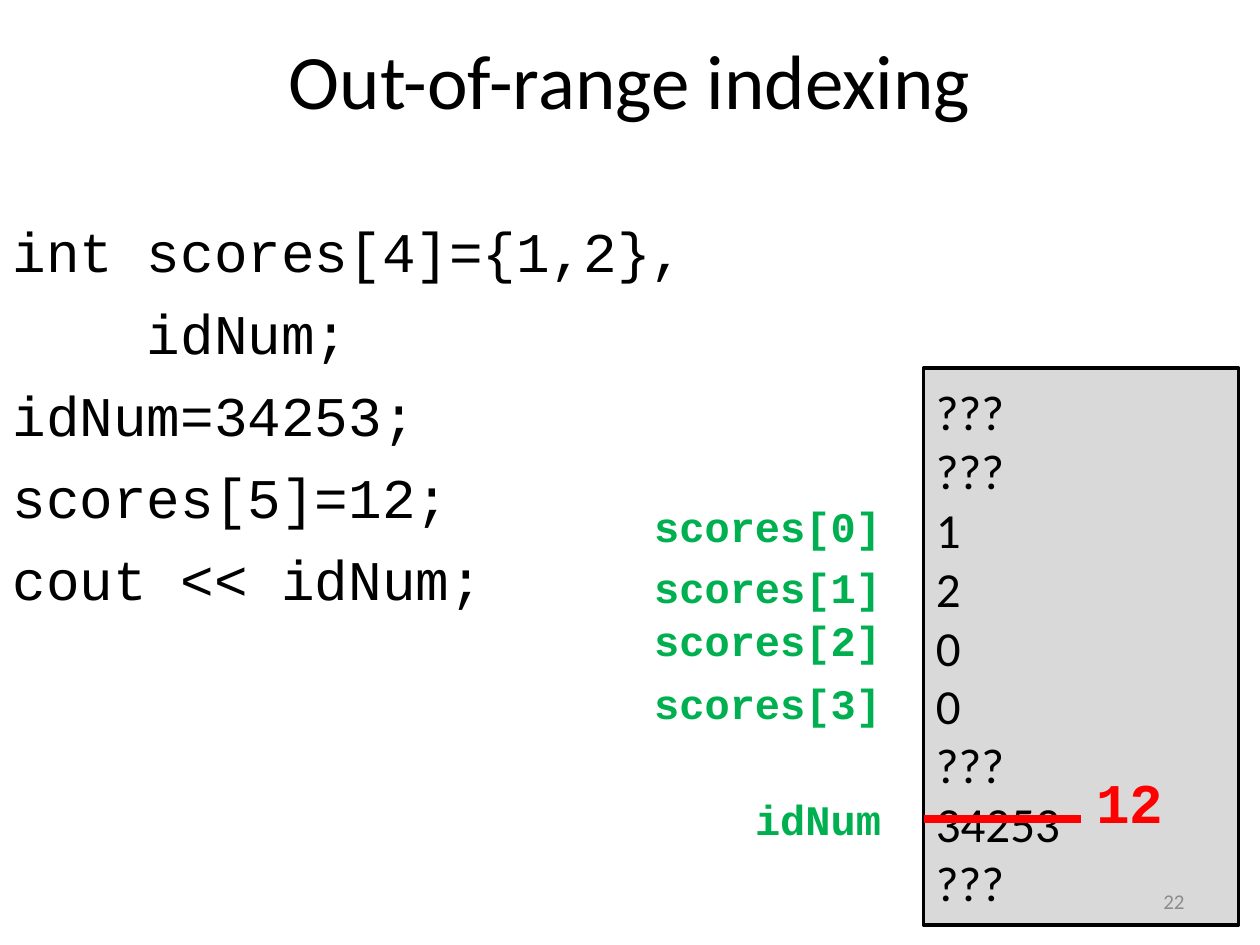
from lxml import etree
from pptx import Presentation
from pptx.dml.color import RGBColor
from pptx.enum import shapes, text
from pptx.oxml.ns import qn
from pptx.util import Inches, Pt

CODE = ["int scores[4]={1,2},", "    idNum;", "idNum=34253;",
        "scores[5]=12;", "cout << idNum;"]
MEMORY = ["???", "???", "1", "2", "0", "0", "???", "34253", "???"]
LABELS = {"scores[0]": 3.92, "scores[1]": 4.41, "scores[2]": 4.83,
          "scores[3]": 5.33, "idNum": 6.25}
BLACK, GREEN, RED, GRAY = "000000", "00B050", "FF0000", "8C8C8C"
LEFT, CENTER, RIGHT = (text.PP_ALIGN.LEFT, text.PP_ALIGN.CENTER,
                       text.PP_ALIGN.RIGHT)
TOP, MIDDLE = text.MSO_ANCHOR.TOP, text.MSO_ANCHOR.MIDDLE


def rgb(value):
    return RGBColor.from_string(value)


def write_lines(frame, lines, size, font="Calibri", color=BLACK, bold=False,
                align=LEFT, anchor=TOP, gap=0):
    frame.word_wrap = True
    frame.vertical_anchor = anchor
    for index, line in enumerate(lines):
        paragraph = frame.add_paragraph() if index else frame.paragraphs[0]
        paragraph.text = line
        paragraph.alignment = align
        paragraph.space_before = Pt(gap if index else 0)
        paragraph.font.name = font
        paragraph.font.size = Pt(size)
        paragraph.font.bold = bold
        paragraph.font.color.rgb = rgb(color)


def add_text(slide, box, lines, size, **style):
    area = slide.shapes.add_textbox(*map(Inches, box))
    write_lines(area.text_frame, lines, size, **style)


def add_memory(slide, box, values):
    memory = slide.shapes.add_shape(shapes.MSO_SHAPE.RECTANGLE,
                                    *map(Inches, box))
    memory.shadow.inherit = False
    memory.fill.solid()
    memory.fill.fore_color.rgb = rgb("D9D9D9")
    memory.line.color.rgb = rgb(BLACK)
    memory.line.width = Pt(2)
    write_lines(memory.text_frame, values, 28, anchor=MIDDLE)


def add_strike(slide, left, right, y):
    strike = slide.shapes.add_connector(
        shapes.MSO_CONNECTOR.STRAIGHT, *map(Inches, (left, y, right, y)))
    strike.line.color.rgb = rgb(RED)
    strike.line.width = Pt(4.5)
    etree.SubElement(strike._element.spPr, qn("a:effectLst"))


def main():
    deck = Presentation()
    deck.slide_width, deck.slide_height = Inches(10), Inches(7.5)
    slide = deck.slides.add_slide(deck.slide_layouts[6])

    add_text(slide, (0.5, 0, 9, 1.25), ["Out-of-range indexing"], 44,
             align=CENTER, anchor=MIDDLE)
    add_text(slide, (0, 1.67, 5.75, 5.67), CODE, 32, font="Courier New",
             gap=8.4)
    add_memory(slide, (7.33, 2.92, 2.5, 4.42), MEMORY)
    for label, top in LABELS.items():
        add_text(slide, (5.07, top, 2.02, 0.5), [label], 24,
                 font="Courier New", color=GREEN, bold=True, align=RIGHT)
    add_strike(slide, 7.33, 8.58, 6.5)
    add_text(slide, (8.6, 6.04, 0.75, 0.64), ["12"], 32,
             font="Courier New", color=RED, bold=True)
    add_text(slide, (7.17, 6.95, 2.33, 0.4), ["22"], 12, color=GRAY,
             align=RIGHT, anchor=MIDDLE)
    deck.save("out.pptx")


if __name__ == "__main__":
    main()
